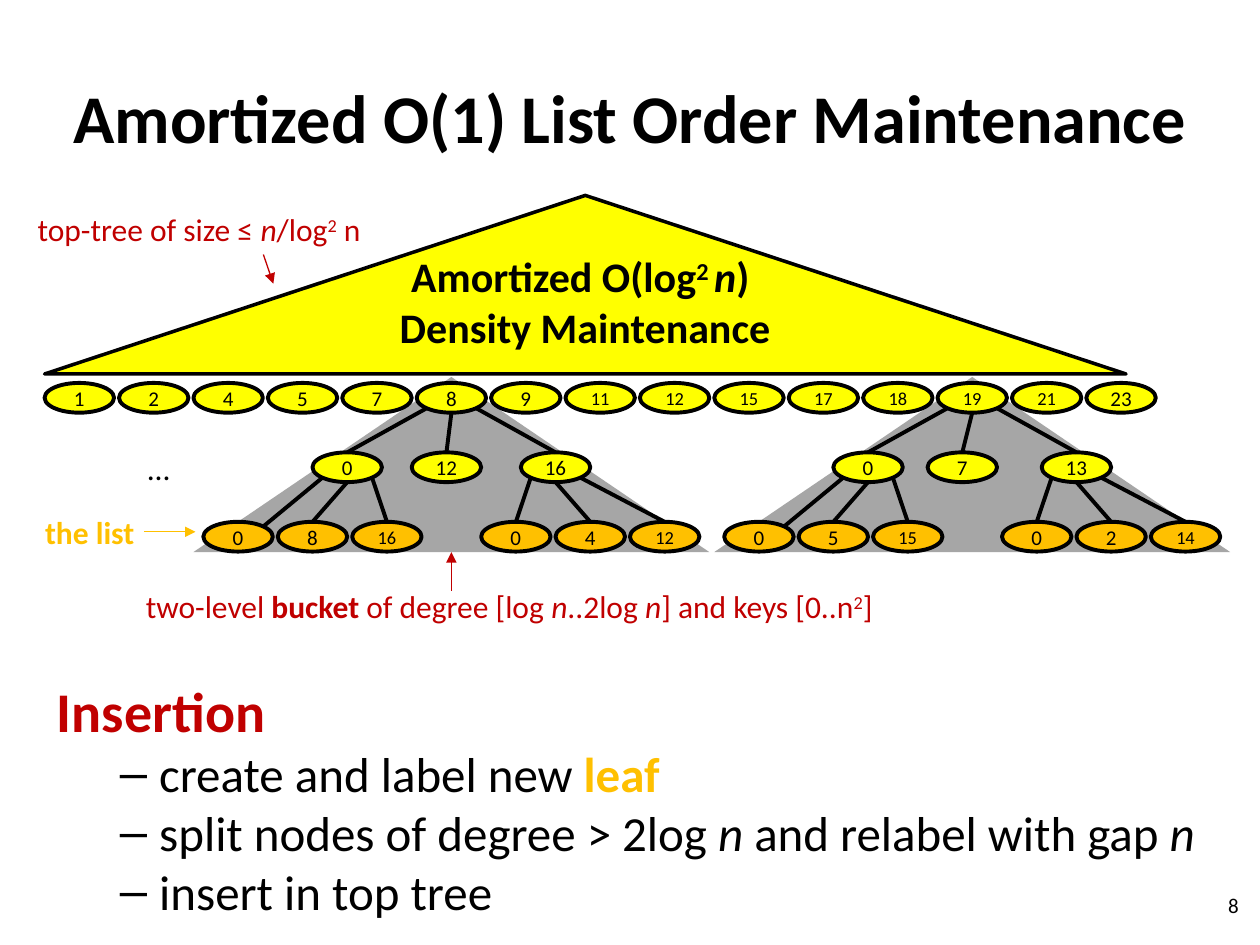
"""Build the slide on amortized list order maintenance."""
from lxml import etree
from pptx import Presentation
from pptx.dml.color import RGBColor
from pptx.enum.shapes import MSO_CONNECTOR, MSO_SHAPE
from pptx.enum.text import MSO_ANCHOR, PP_ALIGN
from pptx.oxml.ns import qn
from pptx.util import Cm, Pt

LINE = MSO_CONNECTOR.STRAIGHT
OVAL, PEAK = MSO_SHAPE.OVAL, MSO_SHAPE.ISOSCELES_TRIANGLE
LEFT, MID, RIGHT = PP_ALIGN.LEFT, PP_ALIGN.CENTER, PP_ALIGN.RIGHT
TOP, CORE = MSO_ANCHOR.TOP, MSO_ANCHOR.MIDDLE
FONT = "Calibri"
HUE = {"black": "000000", "red": "C00000", "gold": "FFC000",
       "yellow": "FFFF00", "gray": "A6A6A6"}

KEYS = [1, 2, 4, 5, 7, 8, 9, 11, 12, 15, 17, 18, 19, 21, 23]
TREES = [
    {"root": 5, "kids": [(0, -2.1), (12, -0.1), (16, 2.1)],
     "leaves": [[0, 8, 16], [0, 4, 12]]},
    {"root": 12, "kids": [(0, -2.1), (7, -0.2), (13, 2.1)],
     "leaves": [[0, 5, 15], [0, 2, 14]]},
]
LEAF_X = [-4.3, 1.3]
X0, STEP, WIDE, HIGH = 0.9, 1.5, 1.4, 0.6
ROOT_Y, KID_Y, LEAF_Y = 7.72, 9.12, 10.52

LIST = [("the list", "b")]
TITLE = [("Amortized O(1) List Order Maintenance", "b")]
DENSE = [("Amortized O(log", "b"), ("2 ", "b^"), ("n", "bi"), (") ", "b|"),
         ("Density Maintenance", "b")]
BUCKET = [("two-level ", ""), ("bucket", "b"), (" of degree [log ", ""),
          ("n", "i"), ("..2log ", ""), ("n", "i"), ("] and keys [0..n", ""),
          ("2", "^"), ("]", "")]
SIZE = [("top-tree of size ≤ ", ""), ("n", "i"), ("/log", ""), ("2", "^"),
        (" n", "")]
HEAD = [("Insertion", "b")]
STEPS = [
    [("create and label new ", ""), ("leaf", "bg")],
    [("split nodes of degree > 2log ", ""), ("n ", "i"),
     ("and relabel with gap ", ""), ("n", "i")],
    [("insert in top tree", "")],
]
LABELS = [
    (TITLE, (0, 0.76, 25.4, 3.18), 39, "black", MID, CORE),
    ([("8", "")], (19.3, 17.73, 5.92, 1.02), 12, "black", RIGHT, CORE),
    (LIST, (0.66, 10.21, 7.6, 1.02), 18, "gold", LEFT, TOP),
    (DENSE, (7.49, 4.93, 8.61, 3.33), 24, "black", MID, TOP),
    (BUCKET, (2.69, 11.71, 15.6, 1.02), 18, "red", LEFT, TOP),
    (SIZE, (0.51, 4.11, 7.6, 1.02), 18, "red", LEFT, TOP),
    ([("...", "")], (1.5, 8.92, 3.4, 1.02), 18, "black", MID, TOP),
]
ARROWS = [((9.1, 11.91), (9.1, 11.13), "red"),
          ((5.31, 5.13), (5.51, 5.72), "red"),
          ((2.9, 10.72), (3.94, 10.72), "gold")]


def rgb(hue):
    return RGBColor.from_string(HUE[hue])


def style(run, size, hue, marks=""):
    font = run.font
    font.name, font.size = FONT, Pt(size)
    font.bold, font.italic = "b" in marks, "i" in marks
    font.color.rgb = rgb("gold" if "g" in marks else hue)
    if "^" in marks:
        run._r.get_or_add_rPr().set("baseline", "30000")


def write(para, parts, size, hue, align=LEFT):
    para.alignment = align
    for text, marks in parts:
        run = para.add_run()
        run.text = text
        style(run, size, hue, marks)
        if "|" in marks:
            para.add_line_break()


def box(place, anchor=TOP):
    frame = slide.shapes.add_textbox(*map(Cm, place)).text_frame
    frame.word_wrap, frame.vertical_anchor = True, anchor
    return frame


def shape(kind, place, fill, width=0):
    item = slide.shapes.add_shape(kind, *map(Cm, place))
    item.shadow.inherit = False
    item.fill.solid()
    item.fill.fore_color.rgb = rgb(fill)
    if width:
        item.line.color.rgb = rgb("black")
        item.line.width = Pt(width)
    else:
        item.line.fill.background()
    return item


def node(key, x, y, fill="yellow", size=12):
    frame = shape(OVAL, (x, y, WIDE, HIGH), fill, 2.25).text_frame
    frame.margin_left = frame.margin_right = 0
    frame.margin_top = frame.margin_bottom = 0
    frame.vertical_anchor = CORE
    frame.text = str(key)
    frame.paragraphs[0].alignment = MID
    style(frame.paragraphs[0].runs[0], size, "black")


def line(start, end, hue="black", width=2.25, head=False):
    item = slide.shapes.add_connector(LINE, *map(Cm, start + end))
    item.line.color.rgb = rgb(hue)
    item.line.width = Pt(width)
    if head:
        etree.SubElement(item.line._get_or_add_ln(), qn("a:tailEnd"),
                         type="triangle")
    etree.SubElement(item._element.spPr, qn("a:effectLst"))


def edge(child, parent, side, corner=False):
    (cx, cy), (px, py) = child, parent
    start = (cx + 1.2, cy + 0.1) if corner else (cx + WIDE / 2, cy)
    end = (px + [0.2, 0.7, 1.2][side], py + [0.51, 0.6, 0.51][side])
    line(start, end)


def bucket(tree):
    base = X0 + tree["root"] * STEP
    kids = [(base + dx, KID_Y) for _, dx in tree["kids"]]
    for side, ((key, _), spot) in enumerate(zip(tree["kids"], kids)):
        node(key, *spot)
        edge(spot, (base, ROOT_Y), side)
    for dx, keys, spot in zip(LEAF_X, tree["leaves"], kids[::2]):
        for side, key in enumerate(keys):
            leaf = (base + dx + side * STEP, LEAF_Y)
            node(key, *leaf, "gold", 12 if key < 10 else 10.5)
            edge(leaf, spot, side, dx < 0 and side == 0)


def indent(para, left, hang, mark=None):
    props = para._p.get_or_add_pPr()
    props.set("marL", str(Cm(left)))
    props.set("indent", str(-Cm(hang)))
    if mark:
        etree.SubElement(props, qn("a:buFont"), typeface="Arial")
        etree.SubElement(props, qn("a:buChar"), char=mark)


deck = Presentation()
deck.slide_width, deck.slide_height = Cm(25.4), Cm(19.05)
slide = deck.slides.add_slide(deck.slide_layouts[6])

for tree in TREES:
    left = X0 + tree["root"] * STEP - 4.5
    shape(PEAK, (left, 7.6, 10.4, 3.53), "gray")
shape(PEAK, (X0, 3.94, 21.8, 3.6), "yellow", 2)
for col, key in enumerate(KEYS):
    node(key, X0 + col * STEP, ROOT_Y, size=10.5 if 10 < key < 23 else 12)
for tree in TREES:
    bucket(tree)
for parts, place, size, hue, align, anchor in LABELS:
    write(box(place, anchor).paragraphs[0], parts, size, hue, align)
for start, end, hue in ARROWS:
    line(start, end, hue, 0.75, True)

body = box((0.9, 13.51, 23.62, 5.59))
write(body.paragraphs[0], HEAD, 32, "red")
indent(body.paragraphs[0], 0.95, 0.95)
for parts in STEPS:
    para = body.add_paragraph()
    para.level = 1
    write(para, parts, 28, "black")
    indent(para, 2.06, 0.79, "–")

deck.save("out.pptx")
